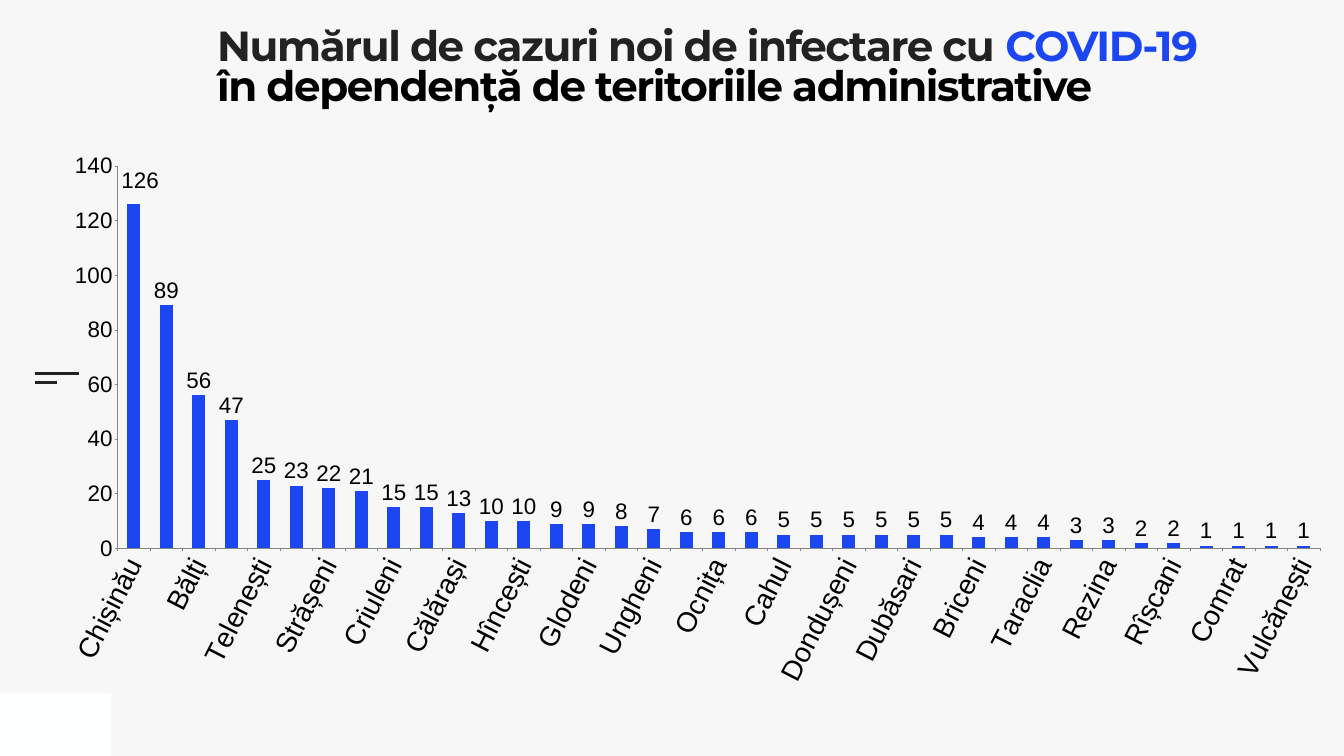
import pptx
import pptx.chart.data
import pptx.dml.color
import pptx.enum.chart
import pptx.enum.shapes
import pptx.enum.text
import pptx.oxml
import pptx.oxml.ns
import pptx.util

Inches, Pt = pptx.util.Inches, pptx.util.Pt
RGBColor = pptx.dml.color.RGBColor
qn = pptx.oxml.ns.qn

BACKGROUND = RGBColor(0xF7, 0xF7, 0xF7)
CORNER = RGBColor(0xFE, 0xFF, 0xFF)
DARK = RGBColor(0x22, 0x22, 0x22)
BLUE = RGBColor(0x1D, 0x46, 0xF3)
BLACK = RGBColor(0x00, 0x00, 0x00)
AXIS_GREY = RGBColor(0x86, 0x86, 0x86)

# Every second column is named on the axis
TERRITORIES = [
    "Chișinău", "Bălți", "Telenești", "Strășeni", "Criuleni", "Călărași",
    "Hîncești", "Glodeni", "Ungheni", "Ocnița", "Cahul", "Dondușeni",
    "Dubăsari", "Briceni", "Taraclia", "Rezina", "Rîșcani", "Comrat",
    "Vulcănești",
]
CASES = [
    126, 89, 56, 47, 25, 23, 22, 21, 15, 15, 13, 10, 10, 9, 9, 8, 7, 6, 6, 6,
    5, 5, 5, 5, 5, 5, 4, 4, 4, 3, 3, 2, 2, 1, 1, 1, 1,
]


def manual_layout(target="", modes="", **fractions):
    """Return a c:layout element with the given x, y, w, h fractions."""
    values = "".join(f'<c:{k} val="{v}"/>' for k, v in fractions.items())
    return pptx.oxml.parse_xml(
        f'<c:layout {pptx.oxml.ns.nsdecls("c")}><c:manualLayout>'
        f"{target}{modes}{values}</c:manualLayout></c:layout>")


class SlideBuilder:
    title_font = "Montserrat"
    chart_font = "Arial"

    def __init__(self, slide):
        self.slide = slide
        fill = slide.background.fill
        fill.solid()
        fill.fore_color.rgb = BACKGROUND

    def rect(self, left, top, width, height, color):
        sp = self.slide.shapes.add_shape(
            pptx.enum.shapes.MSO_SHAPE.RECTANGLE,
            Inches(left), Inches(top), Inches(width), Inches(height))
        sp.shadow.inherit = False
        sp.fill.solid()
        sp.fill.fore_color.rgb = color
        sp.line.fill.background()

    def rule(self, left, y, length):
        line = self.slide.shapes.add_connector(
            pptx.enum.shapes.MSO_CONNECTOR.STRAIGHT,
            Inches(left), Inches(y), Inches(left + length), Inches(y))
        line.line.color.rgb = DARK
        line.line.width = Pt(3)
        line._element.spPr.append(pptx.oxml.parse_xml(
            f'<a:effectLst {pptx.oxml.ns.nsdecls("a")}/>'))

    def title(self, left, top, width, height, lines):
        sp = self.slide.shapes.title
        sp.left, sp.top = Inches(left), Inches(top)
        sp.width, sp.height = Inches(width), Inches(height)
        tf = sp.text_frame
        tf.word_wrap = True
        tf.auto_size = pptx.enum.text.MSO_AUTO_SIZE.NONE
        tf.vertical_anchor = pptx.enum.text.MSO_ANCHOR.TOP
        tf.margin_left = tf.margin_right = tf.margin_top = tf.margin_bottom = 0
        for i, runs in enumerate(lines):
            p = tf.add_paragraph() if i else tf.paragraphs[0]
            p.alignment = pptx.enum.text.PP_ALIGN.LEFT
            p.line_spacing = 0.8
            p.space_before = Pt(0)
            p.font.name, p.font.size, p.font.bold = self.title_font, Pt(60), True
            for text, color in runs:
                r = p.add_run()
                r.text = text
                r.font.color.rgb = color
                r._r.get_or_add_rPr().set("spc", "-200")

    def axis(self, axis, size):
        axis.has_major_gridlines = False
        axis.major_tick_mark = pptx.enum.chart.XL_TICK_MARK.OUTSIDE
        axis.minor_tick_mark = pptx.enum.chart.XL_TICK_MARK.NONE
        axis.format.line.color.rgb = AXIS_GREY
        axis.tick_labels.font.size = Pt(size)

    def column_chart(self, left, top, width, height, name, categories, values):
        data = pptx.chart.data.CategoryChartData()
        data.categories = categories
        data.add_series(name, values)
        chart = self.slide.shapes.add_chart(
            pptx.enum.chart.XL_CHART_TYPE.COLUMN_CLUSTERED,
            Inches(left), Inches(top), Inches(width), Inches(height), data).chart
        chart.has_title = chart.has_legend = False
        chart.font.name, chart.font.size = self.chart_font, Pt(40)
        chart.font.color.rgb = BLACK

        # Axes, with slanted category names
        self.axis(chart.category_axis, 40)
        self.axis(chart.value_axis, 32)
        chart.value_axis.minimum_scale, chart.value_axis.maximum_scale = 0, 140
        chart.value_axis.major_unit = 20
        body = chart.category_axis._element.find(qn("c:txPr")).find(qn("a:bodyPr"))
        body.set("rot", "-3780000")
        body.set("vert", "horz")

        # Columns and their values
        plot = chart.plots[0]
        plot.gap_width = 150
        plot.vary_by_categories = False
        series = plot.series[0]
        series.format.fill.solid()
        series.format.fill.fore_color.rgb = BLUE
        outside = pptx.enum.chart.XL_LABEL_POSITION.OUTSIDE_END
        labels = series.data_labels
        labels.show_value = True

        # The first value stands clear of the axis
        first = series.points[0].data_label
        for label in (labels, first):
            label.position = outside
            label.font.size = Pt(32)
            label.font.color.rgb = BLACK
        first_xml = next(chart.element.iter(qn("c:dLbl")))
        first_xml.find(qn("c:idx")).addnext(manual_layout(x=0.005, y=-0.016))

        # Plot area
        area = next(chart.element.iter(qn("c:plotArea")))
        for old in area.findall(qn("c:layout")):
            area.remove(old)
        area.insert(0, manual_layout(
            '<c:layoutTarget val="inner"/>',
            '<c:xMode val="edge"/><c:yMode val="edge"/>',
            x=0.049, y=0.052, w=0.948, h=0.64))


def main():
    prs = pptx.Presentation()
    prs.slide_width, prs.slide_height = Inches(26.67), Inches(15)
    s = SlideBuilder(prs.slides.add_slide(prs.slide_layouts[5]))

    # Corner block and menu mark
    s.rect(0, 13.76, 2.2, 1.24, CORNER)
    s.rule(0.69, 7.41, 0.88)
    s.rule(0.69, 7.59, 0.44)

    # Title
    s.title(4.31, 0.58, 20.02, 2.73, [
        [("Numărul de cazuri noi de infectare cu ", DARK), ("COVID-19", BLUE)],
        [("în dependență de teritoriile administrative", BLACK)],
    ])

    # New cases by territory
    categories = [""] * len(CASES)
    categories[::2] = TERRITORIES
    s.column_chart(1.1, 2.68, 25.17, 11.85, "Series 1", categories, CASES)
    prs.save("out.pptx")


if __name__ == "__main__":
    main()
